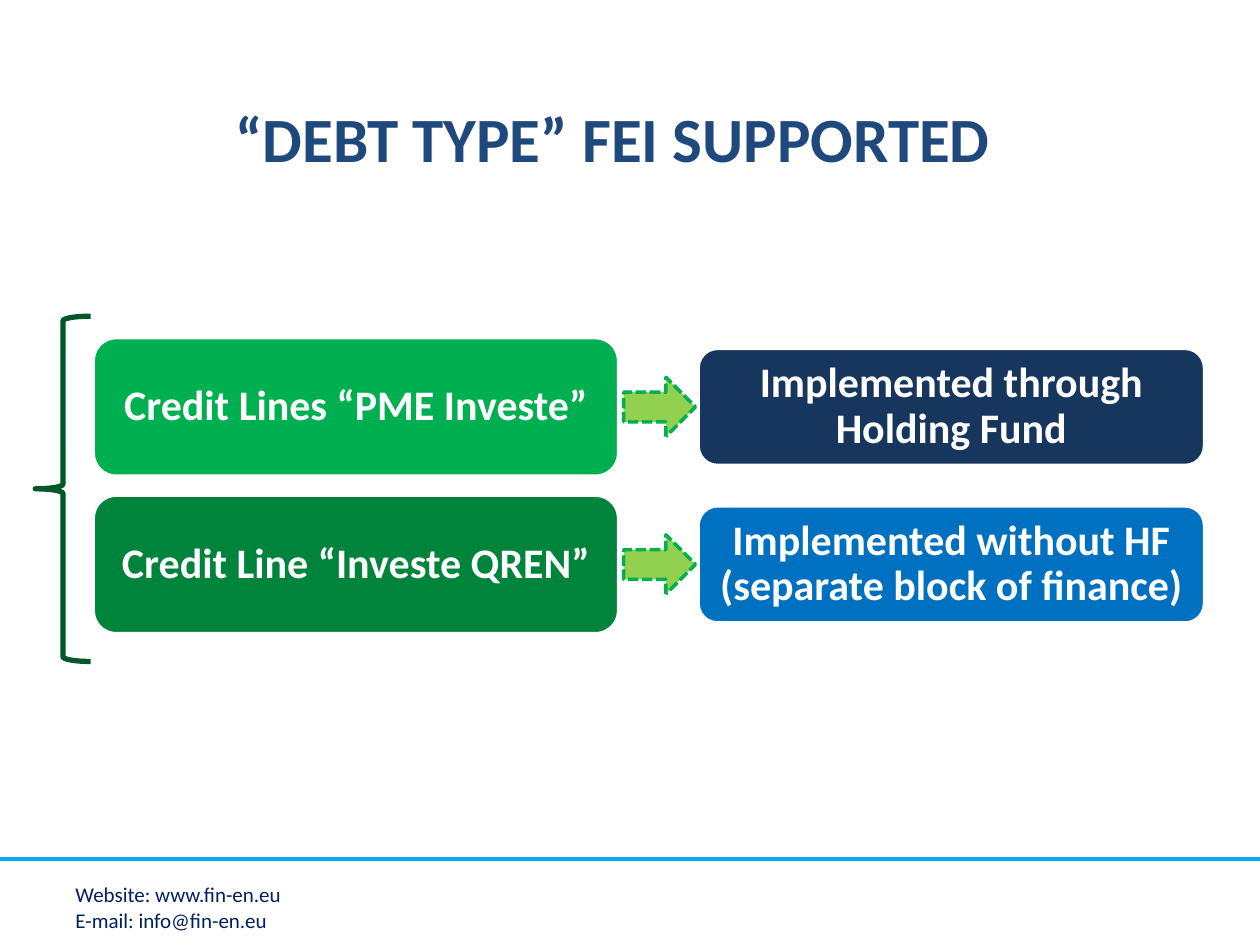
from pptx import Presentation
from pptx.dml.color import RGBColor
from pptx.enum import dml, shapes, text
from pptx.oxml.ns import qn
from pptx.util import Inches, Pt
from lxml import etree

COLORS = {
    "title": "1F497D", "footer": "002060", "rule": "00ACEB", "white": "FFFFFF",
    "brace": "005828", "arrow": "92D050", "arrow_edge": "00B050",
    "green": "00B050", "dark_green": "00843C", "navy": "17365D", "blue": "0070C0",
}
FONT = "Calibri"
TITLE = "“DEBT TYPE” FEI SUPPORTED"
FOOTER = ["Website: www.fin-en.eu", "E-mail: info@fin-en.eu"]
# instrument, its colour, implementation, its colour
ROWS = [
    ("Credit Lines “PME Investe”", "green",
     "Implemented through Holding Fund", "navy"),
    ("Credit Line “Investe QREN”", "dark_green",
     "Implemented without HF (separate block of finance)", "blue"),
]
FIRST_ROW_CENTER, ROW_PITCH = 3.23, 1.25
INSTRUMENT = {"left": 0.74, "width": 4.17, "height": 1.1}
ARROW = {"left": 5.0, "width": 0.47, "height": 0.57}
IMPLEMENTATION = {"left": 5.54, "width": 4.02, "height": 0.93}


def color(name):
    return RGBColor.from_string(COLORS[name])


def add_run(paragraph, content, size, color_name, bold=False):
    run = paragraph.add_run()
    run.text = content
    run.font.name = FONT
    run.font.size = Pt(size)
    run.font.bold = bold
    run.font.color.rgb = color(color_name)


def add_text(slide, box, lines, size, color_name, bold=False,
             anchor=text.MSO_ANCHOR.TOP):
    frame = slide.shapes.add_textbox(*map(Inches, box)).text_frame
    frame.word_wrap = True
    frame.vertical_anchor = anchor
    for index, line in enumerate(lines):
        paragraph = frame.add_paragraph() if index else frame.paragraphs[0]
        add_run(paragraph, line, size, color_name, bold)


def add_outlined(slide, kind, box, line_color, line_width, fill=None):
    shape = slide.shapes.add_shape(kind, *map(Inches, box))
    shape.shadow.inherit = False
    if fill:
        shape.fill.solid()
        shape.fill.fore_color.rgb = color(fill)
    else:
        shape.fill.background()
    shape.line.color.rgb = color(line_color)
    shape.line.width = Pt(line_width)
    return shape


def centered(column, center):
    """Box of a column's size, centred vertically on a row."""
    return (column["left"], center - column["height"] / 2,
            column["width"], column["height"])


def add_block(slide, column, center, label, fill):
    block = add_outlined(slide, shapes.MSO_SHAPE.ROUNDED_RECTANGLE,
                         centered(column, center), "white", 2, fill)
    frame = block.text_frame
    frame.word_wrap = True
    frame.vertical_anchor = text.MSO_ANCHOR.MIDDLE
    frame.margin_left = frame.margin_right = Inches(0.07)
    frame.margin_top = frame.margin_bottom = Inches(0.07)
    paragraph = frame.paragraphs[0]
    paragraph.alignment = text.PP_ALIGN.CENTER
    paragraph.line_spacing = 0.9
    add_run(paragraph, label, 24, "white", bold=True)


def add_arrow(slide, center):
    arrow = add_outlined(slide, shapes.MSO_SHAPE.DOWN_ARROW,
                         centered(ARROW, center), "arrow_edge", 2, "arrow")
    arrow.rotation = 270
    arrow.line.dash_style = dml.MSO_LINE.SQUARE_DOT


def add_footer_rule(slide):
    rule = slide.shapes.add_connector(
        shapes.MSO_CONNECTOR.STRAIGHT,
        Inches(0), Inches(6.82), Inches(10), Inches(6.82))
    rule.line.color.rgb = color("rule")
    rule.line.width = Pt(2.25)
    etree.SubElement(rule._element.spPr, qn("a:effectLst"))


def main():
    presentation = Presentation()
    presentation.slide_width = Inches(10)
    presentation.slide_height = Inches(7.5)
    slide = presentation.slides.add_slide(presentation.slide_layouts[6])

    add_footer_rule(slide)
    add_text(slide, (0.5, 6.95, 2.85, 0.4), FOOTER, 12, "footer")
    add_text(slide, (1.77, 0.68, 7.8, 0.82), [TITLE], 36, "title", bold=True,
             anchor=text.MSO_ANCHOR.MIDDLE)
    add_outlined(slide, shapes.MSO_SHAPE.LEFT_BRACE,
                 (0.28, 2.51, 0.44, 2.74), "brace", 3)

    for index, (instrument, left_fill, method, right_fill) in enumerate(ROWS):
        center = FIRST_ROW_CENTER + index * ROW_PITCH
        add_block(slide, INSTRUMENT, center, instrument, left_fill)
        add_block(slide, IMPLEMENTATION, center, method, right_fill)
        add_arrow(slide, center)

    presentation.save("out.pptx")


if __name__ == "__main__":
    main()
